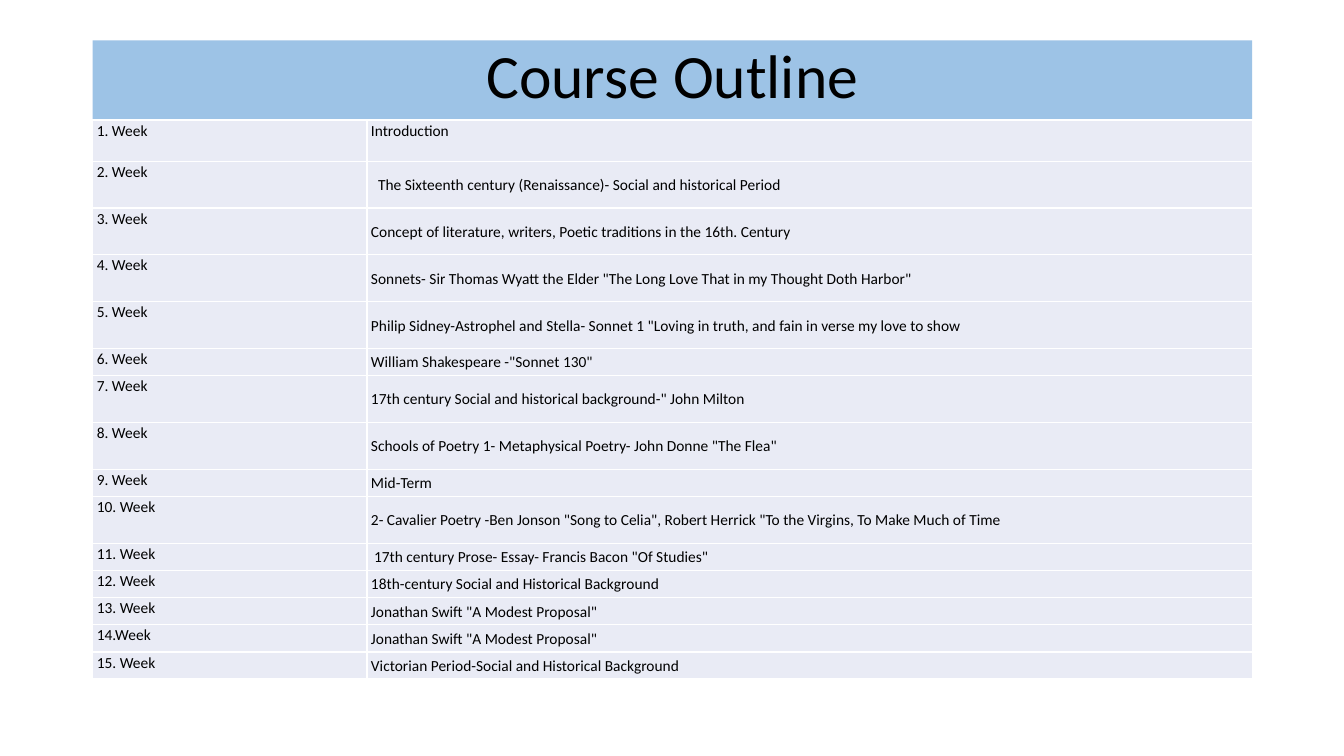
import pptx
import pptx.dml.color
import pptx.enum.shapes
import pptx.enum.text
import pptx.oxml
import pptx.oxml.ns
import pptx.util
from pptx.util import Inches

TITLE = "Course Outline"
# week, topic, whether the row is tall
WEEKS = [
    ("1. Week", "Introduction", False),
    ("2. Week", "The Sixteenth century (Renaissance)- Social and historical Period", True),
    ("3. Week", "Concept of literature, writers, Poetic traditions in the 16th. Century", True),
    ("4. Week", 'Sonnets- Sir Thomas Wyatt the Elder "The Long Love That in my Thought Doth Harbor"', True),
    ("5. Week", 'Philip Sidney-Astrophel and Stella- Sonnet 1 "Loving in truth, and fain in verse my love to show', True),
    ("6. Week", 'William Shakespeare -"Sonnet 130"', False),
    ("7. Week", '17th century Social and historical background-" John Milton', True),
    ("8. Week", 'Schools of Poetry 1- Metaphysical Poetry- John Donne "The Flea"', True),
    ("9. Week", "Mid-Term", False),
    ("10. Week", '2- Cavalier Poetry -Ben Jonson "Song to Celia", Robert Herrick "To the Virgins, To Make Much of Time', True),
    ("11. Week", '17th century Prose- Essay- Francis Bacon "Of Studies"', False),
    ("12. Week", "18th-century Social and Historical Background", False),
    ("13. Week", 'Jonathan Swift "A Modest Proposal"', False),
    ("14.Week", 'Jonathan Swift "A Modest Proposal"', False),
    ("15. Week", "Victorian Period-Social and Historical Background", False),
]
TOPIC_INDENTS = {1: 0.07, 10: 0.03}  # extra left margin by row index

LEFT, WIDTH = 0.92, 11.5
TITLE_TOP, TITLE_HEIGHT = 0.4, 1.45
TABLE_TOP, TABLE_HEIGHT = 1.19, 5.55
COLUMNS = (2.72, 8.78)
FIRST_ROW, SHORT_ROW = 0.41, 0.27
FONT, BLACK, WHITE = "Calibri", "000000", "FFFFFF"
TITLE_FILL, CELL_FILL = "9DC3E6", "E9EBF5"
ANCHOR, ALIGN = pptx.enum.text.MSO_ANCHOR, pptx.enum.text.PP_ALIGN


def color(value):
    return pptx.dml.color.RGBColor.from_string(value)


def paint(item, value):
    item.fill.solid()
    item.fill.fore_color.rgb = color(value)


def write(frame, text, size, align, spacing):
    frame.text = text
    para = frame.paragraphs[0]
    para.alignment = align
    para.line_spacing = spacing
    font = para.runs[0].font
    font.name, font.size = FONT, pptx.util.Pt(size)
    font.color.rgb = color(BLACK)


def add_borders(cell):
    """Put the four side lines ahead of the fill, as the schema requires."""
    properties = cell._tc.get_or_add_tcPr()
    for index, side in enumerate(("lnL", "lnR", "lnT", "lnB")):
        properties.insert(index, pptx.oxml.parse_xml(
            f'<a:{side} {pptx.oxml.ns.nsdecls("a")} w="{pptx.util.Pt(1)}"><a:solidFill>'
            f'<a:srgbClr val="{WHITE}"/></a:solidFill></a:{side}>'))


def add_title(page):
    bar = page.shapes.add_shape(
        pptx.enum.shapes.MSO_SHAPE.RECTANGLE, Inches(LEFT), Inches(TITLE_TOP),
        Inches(WIDTH), Inches(TITLE_HEIGHT))
    bar.shadow.inherit = False
    bar.line.fill.background()
    paint(bar, TITLE_FILL)
    bar.text_frame.vertical_anchor = ANCHOR.TOP
    write(bar.text_frame, TITLE, 44, ALIGN.CENTER, 0.9)


def add_outline(page):
    table = page.shapes.add_table(
        len(WEEKS), len(COLUMNS), Inches(LEFT), Inches(TABLE_TOP),
        Inches(WIDTH), Inches(TABLE_HEIGHT)).table
    table.first_row = table.horz_banding = False
    for column, width in zip(table.columns, COLUMNS):
        column.width = Inches(width)

    tall_count = sum(tall for _, _, tall in WEEKS)
    short_count = len(WEEKS) - tall_count - 1
    tall_row = (TABLE_HEIGHT - FIRST_ROW - short_count * SHORT_ROW) / tall_count
    for index, (week, topic, tall) in enumerate(WEEKS):
        height = FIRST_ROW if index == 0 else tall_row if tall else SHORT_ROW
        table.rows[index].height = Inches(height)
        for column, text in enumerate((week, topic)):
            cell = table.cell(index, column)
            indent = TOPIC_INDENTS.get(index, 0) if column else 0
            cell.margin_left, cell.margin_right = Inches(0.04 + indent), Inches(0.04)
            cell.margin_top = cell.margin_bottom = 0
            centred = column == 1 and index > 0
            cell.vertical_anchor = ANCHOR.MIDDLE if centred else ANCHOR.TOP
            write(cell.text_frame, text, 11, ALIGN.JUSTIFY if column else ALIGN.LEFT, 1.07)
            paint(cell, CELL_FILL)
            add_borders(cell)


def main():
    deck = pptx.Presentation()
    deck.slide_width, deck.slide_height = Inches(13.33), Inches(7.5)
    page = deck.slides.add_slide(deck.slide_layouts[6])
    add_title(page)
    add_outline(page)
    deck.save("out.pptx")


if __name__ == "__main__":
    main()
